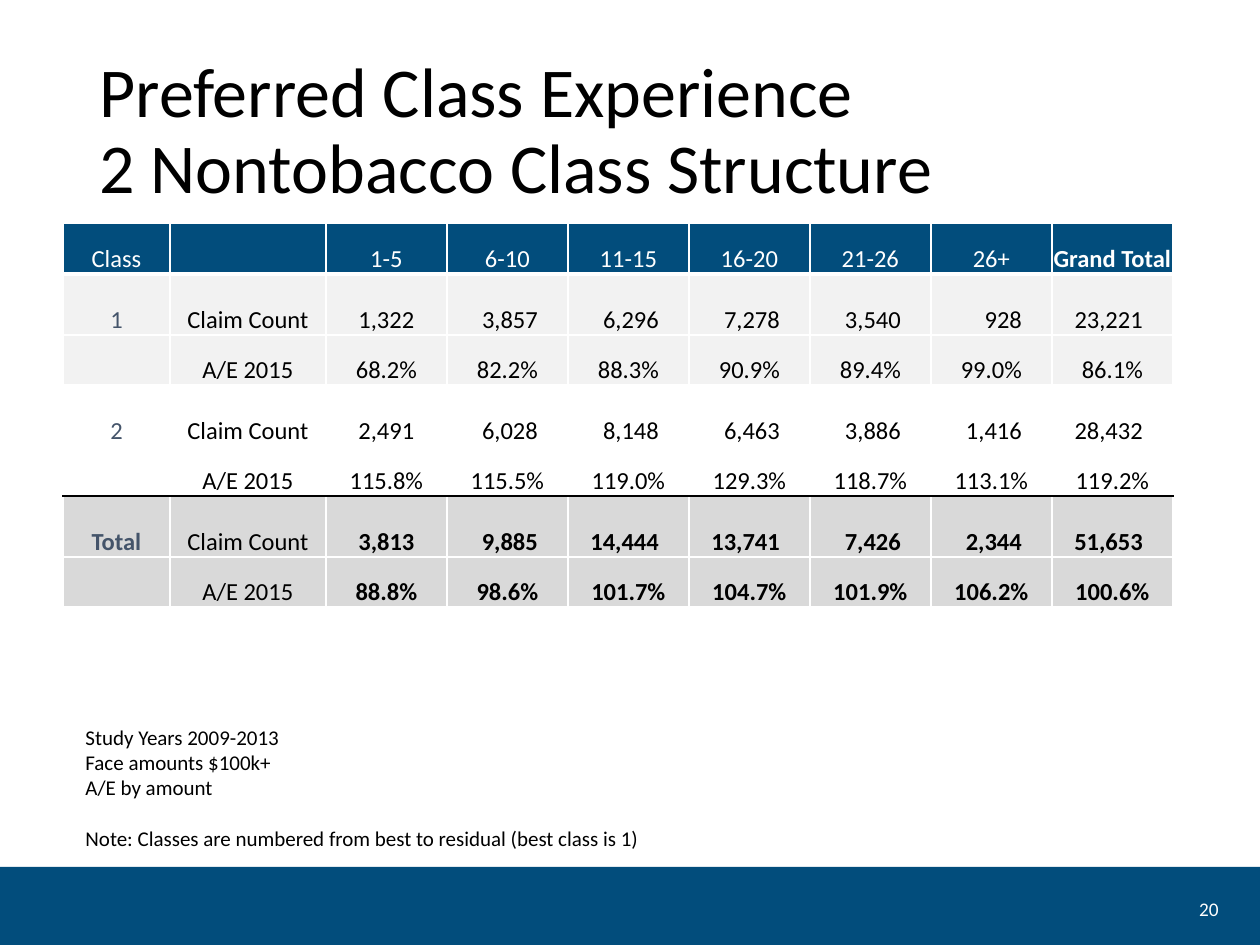
from lxml.etree import SubElement
from pptx import Presentation
from pptx.dml.color import RGBColor
from pptx.enum.shapes import MSO_SHAPE
from pptx.enum.text import MSO_ANCHOR, MSO_AUTO_SIZE, PP_ALIGN
from pptx.oxml.ns import qn
from pptx.util import Emu, Pt

PX = 914400 // 126
FONT = "Calibri"
BLUE, WHITE, BLACK, SLATE = "024D7C", "FFFFFF", "000000", "44546A"
LIGHT, GRAY = "F2F2F2", "D9D9D9"

ROWS = [
    ["Class", "", "1-5", "6-10", "11-15", "16-20", "21-26", "26+", "Grand Total"],
    ["1", "Claim Count", "1,322", "3,857", "6,296", "7,278", "3,540", "928", "23,221"],
    ["", "A/E 2015", "68.2%", "82.2%", "88.3%", "90.9%", "89.4%", "99.0%", "86.1%"],
    ["2", "Claim Count", "2,491", "6,028", "8,148", "6,463", "3,886", "1,416", "28,432"],
    ["", "A/E 2015", "115.8%", "115.5%", "119.0%", "129.3%", "118.7%", "113.1%", "119.2%"],
    ["Total", "Claim Count", "3,813", "9,885", "14,444", "13,741", "7,426", "2,344", "51,653"],
    ["", "A/E 2015", "88.8%", "98.6%", "101.7%", "104.7%", "101.9%", "106.2%", "100.6%"],
]
ROW_FILLS = [BLUE, LIGHT, LIGHT, WHITE, WHITE, GRAY, GRAY]
ROW_HEIGHTS = [51] + [61, 50] * 3
COL_WIDTHS = [107, 156] + [121] * 7
# Horizontal rules from the top edge to the bottom edge: colour, points
THIN = (WHITE, 1)
RULES = [THIN, (WHITE, 3), THIN, THIN, THIN, (BLACK, 1), THIN, THIN]


def px(*lengths):
    return [Emu(n * PX) for n in lengths]


def rgb(color):
    return RGBColor.from_string(color)


def style(p, size, color, align=PP_ALIGN.LEFT, bold=False):
    p.alignment = align
    font = p.font
    font.name, font.size, font.bold = FONT, Pt(size), bold
    font.color.rgb = rgb(color)


def add_title(s, text):
    title = s.shapes.title
    title.left, title.top, title.width, title.height = px(87, 45, 1086, 176)
    tf = title.text_frame
    tf.text = text
    tf.auto_size = MSO_AUTO_SIZE.NONE
    tf.vertical_anchor = MSO_ANCHOR.MIDDLE
    p = tf.paragraphs[0]
    p.line_spacing = 0.9
    style(p, 40, BLACK)


def add_band(s):
    band = s.shapes.add_shape(MSO_SHAPE.RECTANGLE, *px(0, 867, 1260, 78))
    band.shadow.inherit = False
    band.fill.solid()
    band.fill.fore_color.rgb = rgb(BLUE)
    band.line.fill.background()


def add_text(s, box, lines, size, color, align=PP_ALIGN.LEFT, anchor=MSO_ANCHOR.TOP):
    tf = s.shapes.add_textbox(*px(*box)).text_frame
    tf.word_wrap = True
    tf.vertical_anchor = anchor
    tf.text = "\n".join(lines)
    for p in tf.paragraphs:
        style(p, size, color, align)
    return tf


def add_border(cell, side, color, width):
    ln = SubElement(cell._tc.get_or_add_tcPr(), qn(f"a:ln{side}"), w=str(Pt(width)))
    fill = SubElement(ln, qn("a:solidFill"))
    SubElement(fill, qn("a:srgbClr"), val=color)


def format_cell(cell, row, col):
    cell.text = ROWS[row][col]
    cell.vertical_anchor = MSO_ANCHOR.BOTTOM
    cell.margin_left, cell.margin_right, cell.margin_top, cell.margin_bottom = px(1, 1, 1, 0)
    edges = {"L": THIN, "R": THIN, "T": RULES[row], "B": RULES[row + 1]}
    for side, rule in edges.items():
        add_border(cell, side, *rule)
    cell.fill.solid()
    cell.fill.fore_color.rgb = rgb(ROW_FILLS[row])

    # Claim counts line up on the right, everything else is centred
    align = PP_ALIGN.CENTER
    if col > 2 and ROWS[row][1] == "Claim Count":
        align = PP_ALIGN.RIGHT
        cell.margin_right = Emu(30 * PX)
    color = WHITE if row == 0 else SLATE if col == 0 else BLACK
    bold = col == 8 if row == 0 else row >= 5 and col != 1
    style(cell.text_frame.paragraphs[0], 14, color, align, bold)


def add_class_table(s):
    box = px(63, 223, sum(COL_WIDTHS), sum(ROW_HEIGHTS))
    table = s.shapes.add_table(len(ROWS), len(COL_WIDTHS), *box).table
    table.first_row = table.horz_banding = False
    for column, width in zip(table.columns, px(*COL_WIDTHS)):
        column.width = width
    for row, height in zip(table.rows, px(*ROW_HEIGHTS)):
        row.height = height
    for row in range(len(ROWS)):
        for col in range(len(COL_WIDTHS)):
            format_cell(table.cell(row, col), row, col)


def main():
    prs = Presentation()
    prs.slide_width, prs.slide_height = px(1260, 945)
    s = prs.slides.add_slide(prs.slide_layouts[5])

    # Footer band and heading
    add_band(s)
    add_title(s, "Preferred Class Experience\v2 Nontobacco Class Structure")

    # Experience by class and duration
    add_class_table(s)

    # Page number and study notes
    add_text(s, (1164, 895, 67, 28), ["20"], 11, WHITE, PP_ALIGN.RIGHT, MSO_ANCHOR.MIDDLE)
    notes = add_text(s, (73, 718, 1090, 190), [
        "Study Years 2009-2013",
        "Face amounts $100k+",
        "A/E by amount",
        "Note: Classes are numbered from best to residual (best class is 1)",
    ], 12, BLACK)
    notes.paragraphs[-1].space_before = Pt(14.5)

    prs.save("out.pptx")


if __name__ == "__main__":
    main()
